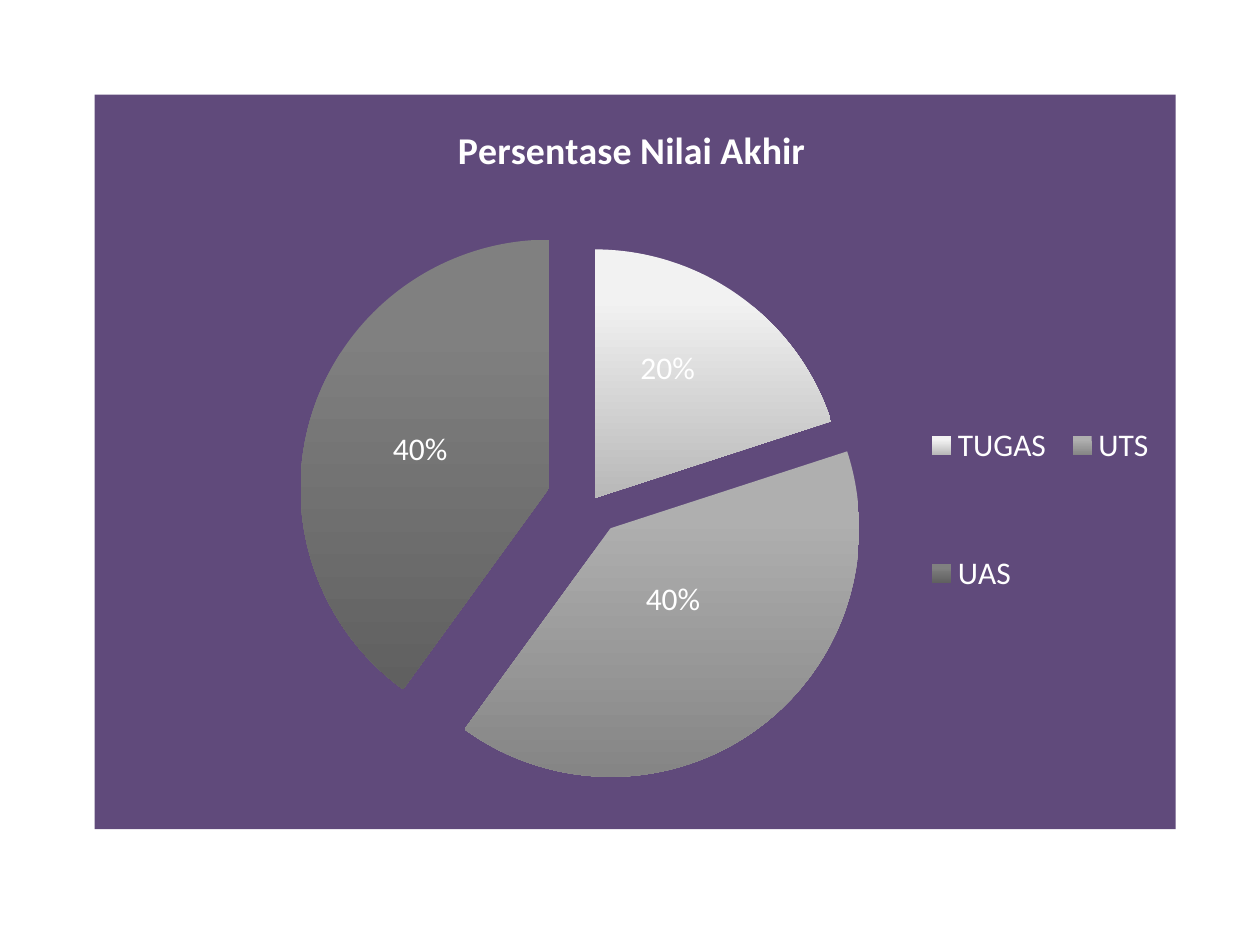
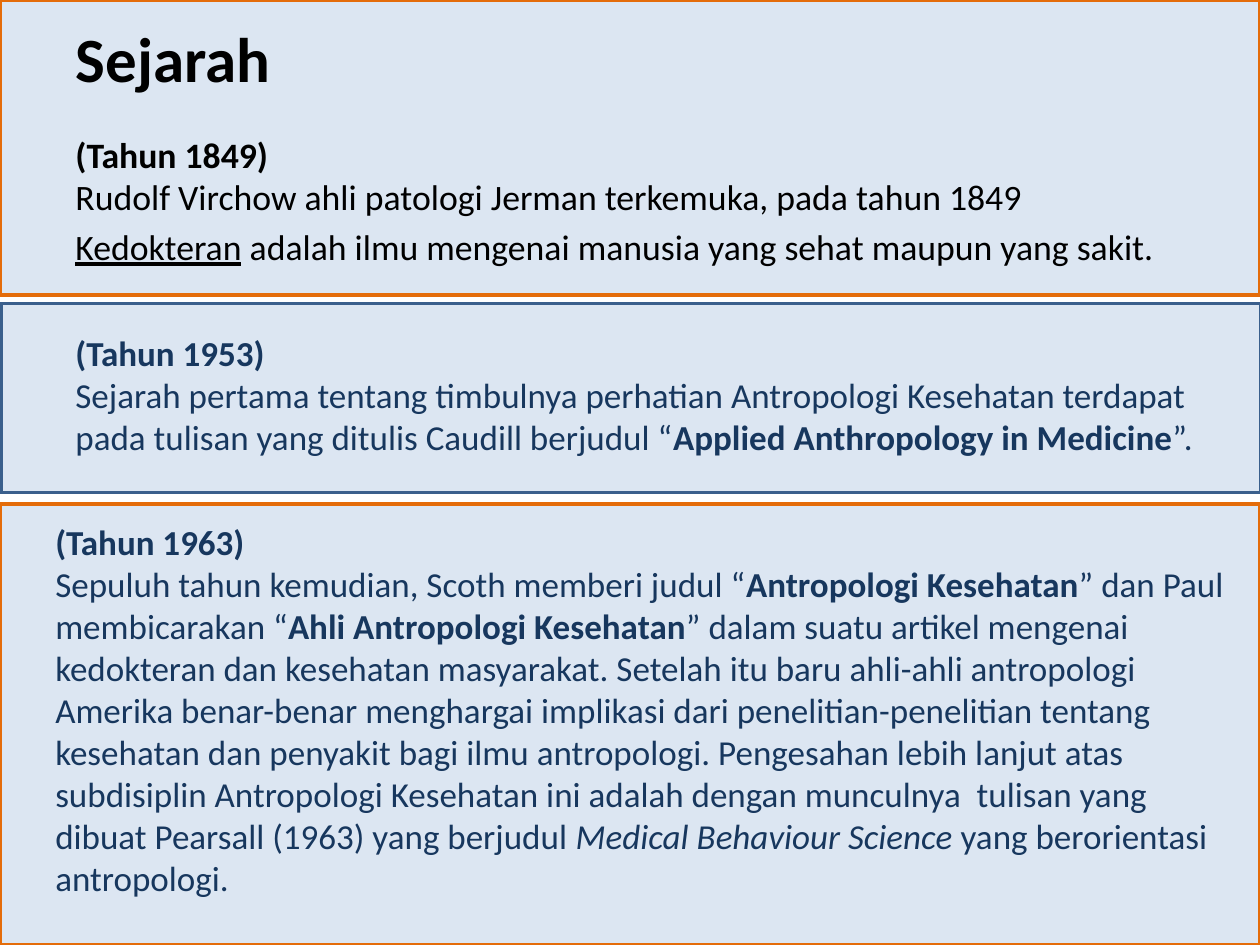
from typing import NamedTuple

from lxml import etree
from pptx import Presentation
from pptx.chart.data import CategoryChartData
from pptx.dml.color import RGBColor
from pptx.enum.chart import XL_CHART_TYPE, XL_LABEL_POSITION, XL_LEGEND_POSITION
from pptx.enum.shapes import MSO_SHAPE
from pptx.enum.text import MSO_ANCHOR, PP_ALIGN
from pptx.oxml import parse_xml
from pptx.oxml.ns import nsdecls, qn
from pptx.util import Inches, Pt

PIE = XL_CHART_TYPE.PIE
LABEL_CENTER = XL_LABEL_POSITION.CENTER
LEGEND_RIGHT = XL_LEGEND_POSITION.RIGHT
RECTANGLE = MSO_SHAPE.RECTANGLE
MIDDLE, TOP = MSO_ANCHOR.MIDDLE, MSO_ANCHOR.TOP
LEFT = PP_ALIGN.LEFT

FONT = "Calibri"
WHITE = RGBColor(0xFF, 0xFF, 0xFF)
BLACK = RGBColor(0x00, 0x00, 0x00)
PURPLE = RGBColor(0x60, 0x4A, 0x7B)
PALE_BLUE = RGBColor(0xDC, 0xE6, 0xF2)
ORANGE = RGBColor(0xE4, 0x6C, 0x0A)
STEEL_BLUE = RGBColor(0x3A, 0x5F, 0x8C)
NAVY = RGBColor(0x17, 0x37, 0x5E)

TITLE_ONLY, BLANK = 5, 6


class Slice(NamedTuple):
    name: str
    value: int
    top_color: RGBColor
    bottom_color: RGBColor
    explosion: int
    label_shift: tuple[float, float]


class Span(NamedTuple):
    text: str
    bold: bool = False
    italic: bool = False
    underline: bool = False


class Panel(NamedTuple):
    left: float
    top: float
    height: float
    line: RGBColor


class Passage(NamedTuple):
    left: float
    top: float
    width: float
    height: float
    size: float
    color: RGBColor
    paragraphs: list[list[Span]]


SLICES = [
    Slice("TUGAS", 20, RGBColor(0xF2, 0xF2, 0xF2), RGBColor(0xB8, 0xB8, 0xB8), 2, (0, -0.04)),
    Slice("UTS", 40, RGBColor(0xAF, 0xAF, 0xAF), RGBColor(0x85, 0x85, 0x85), 13, (-0.01, -0.04)),
    Slice("UAS", 40, RGBColor(0x80, 0x80, 0x80), RGBColor(0x60, 0x60, 0x60), 18, (-0.01, 0)),
]

PANELS = [
    Panel(0, 0, 2.34, ORANGE),
    Panel(0.01, 2.41, 1.5, STEEL_BLUE),
    Panel(0, 4, 3.5, ORANGE),
]

PASSAGES = [
    Passage(0.5, 1.01, 9.25, 1.33, 20.4, BLACK, [
        [
            Span("(Tahun 1849)\n", bold=True),
            Span("Rudolf Virchow ahli patologi Jerman terkemuka, pada tahun 1849"),
        ],
        [
            Span("Kedokteran", underline=True),
            Span(" adalah ilmu mengenai manusia yang sehat maupun yang sakit."),
        ],
    ]),
    Passage(0.5, 2.58, 9.25, 1.33, 20, NAVY, [[
        Span("(Tahun 1953)\n", bold=True),
        Span("Sejarah pertama tentang timbulnya perhatian Antropologi Kesehatan "
             "terdapat pada tulisan yang ditulis Caudill berjudul “"),
        Span("Applied Anthropology in Medicine", bold=True),
        Span("”."),
    ]]),
    Passage(0.34, 4.08, 9.58, 3.25, 20, NAVY, [[
        Span("(Tahun 1963)\n", bold=True),
        Span("Sepuluh tahun kemudian, Scoth memberi judul “"),
        Span("Antropologi Kesehatan", bold=True),
        Span("” dan Paul membicarakan “"),
        Span("Ahli Antropologi Kesehatan", bold=True),
        Span("” dalam suatu artikel mengenai kedokteran dan kesehatan masyarakat. "
             "Setelah itu baru ahli-ahli antropologi Amerika benar-benar menghargai "
             "implikasi dari penelitian-penelitian tentang kesehatan dan penyakit bagi "
             "ilmu antropologi. Pengesahan lebih lanjut atas subdisiplin Antropologi "
             "Kesehatan ini adalah dengan munculnya  tulisan yang dibuat Pearsall (1963) "
             "yang berjudul "),
        Span("Medical Behaviour Science", italic=True),
        Span(" yang berorientasi antropologi."),
    ]]),
]


def style_font(font, size: float, color: RGBColor, bold: bool = False) -> None:
    font.name = FONT
    font.size = Pt(size)
    font.bold = bold
    font.color.rgb = color


def add_span(paragraph, span: Span, size: float, color: RGBColor) -> None:
    """Add one run; a newline at its end becomes a line break."""
    run = paragraph.add_run()
    run.text = span.text.rstrip("\n")
    style_font(run.font, size, color, span.bold)
    run.font.italic = span.italic
    run.font.underline = span.underline
    if span.text.endswith("\n"):
        paragraph.add_line_break()


def place(element, after: str | None, **fractions: float) -> None:
    """Give a chart part a manual layout, in fractions of the chart."""
    old = element.find(qn("c:layout"))
    if old is not None:
        element.remove(old)
    layout = parse_xml(f"<c:layout {nsdecls('c')}><c:manualLayout/></c:layout>")
    if "w" in fractions:
        modes = {"xMode": "edge", "yMode": "edge"}
        if after is None:
            modes = {"layoutTarget": "inner", **modes}
    else:
        modes = {}
    for tag, value in {**modes, **fractions}.items():
        etree.SubElement(layout[0], qn(f"c:{tag}")).set("val", str(value))
    if after is None:
        element.insert(0, layout)
    else:
        element.find(qn(after)).addnext(layout)


def format_slices(chart) -> None:
    series = chart.plots[0].series[0]
    for index, part in enumerate(SLICES):
        point = series.points[index]
        fill = point.format.fill
        fill.gradient()
        fill.gradient_angle = 270
        first, last = fill.gradient_stops
        first.color.rgb, last.color.rgb = part.top_color, part.bottom_color
        first.position, last.position = 0.2, 1
        point.format.line.fill.background()
        style_font(point.data_label.font, 18, WHITE)
        point.data_label.position = LABEL_CENTER

    # Exploded slices and shifted labels
    points = chart.element.xpath(".//c:dPt")
    labels = chart.element.xpath(".//c:dLbl")
    for part, point, label in zip(SLICES, points, labels):
        explosion = parse_xml(f'<c:explosion {nsdecls("c")} val="{part.explosion}"/>')
        point.find(qn("c:spPr")).addprevious(explosion)
        shift_x, shift_y = part.label_shift
        place(label, "c:idx", x=shift_x, y=shift_y)


def build_grade_slide(deck) -> None:
    slide = deck.slides.add_slide(deck.slide_layouts[BLANK])
    data = CategoryChartData(number_format='0"%"')
    data.categories = [part.name for part in SLICES]
    data.add_series("Persentase Nilai Akhir", [part.value for part in SLICES])
    chart = slide.shapes.add_chart(
        PIE, Inches(0.75), Inches(0.75), Inches(8.58), Inches(5.83), data
    ).chart
    style_font(chart.font, 18, WHITE)
    chart.plots[0].vary_by_categories = True

    # Title
    chart.has_title = True
    run = chart.chart_title.text_frame.paragraphs[0].add_run()
    run.text = "Persentase Nilai Akhir"
    style_font(run.font, 21.6, WHITE, bold=True)
    place(chart.element.xpath(".//c:title")[0], "c:tx",
          xMode="edge", yMode="edge", x=0.33, y=0.03)

    # Legend and plot
    chart.has_legend = True
    chart.legend.position = LEGEND_RIGHT
    chart.legend.include_in_layout = False
    style_font(chart.legend.font, 18, WHITE)
    place(chart.element.xpath(".//c:legend")[0], "c:legendPos",
          x=0.76, y=0.33, w=0.23, h=0.47)
    place(chart.element.xpath(".//c:plotArea")[0], None,
          x=0.23, y=0.21, w=0.46, h=0.69)
    format_slices(chart)

    # Purple background
    background = parse_xml(
        f'<c:spPr {nsdecls("c", "a")}><a:solidFill><a:srgbClr val="{PURPLE}"/>'
        "</a:solidFill><a:ln><a:noFill/></a:ln></c:spPr>"
    )
    chart.element.find(qn("c:chart")).addnext(background)


def add_panel(slide, panel: Panel) -> None:
    box = slide.shapes.add_shape(
        RECTANGLE, Inches(panel.left), Inches(panel.top), Inches(10), Inches(panel.height)
    )
    box.shadow.inherit = False
    box.fill.solid()
    box.fill.fore_color.rgb = PALE_BLUE
    box.line.color.rgb = panel.line
    box.line.width = Pt(2)


def add_passage(slide, passage: Passage) -> None:
    box = slide.shapes.add_textbox(
        Inches(passage.left), Inches(passage.top),
        Inches(passage.width), Inches(passage.height),
    )
    frame = box.text_frame
    frame.word_wrap = True
    frame.vertical_anchor = TOP
    for index, spans in enumerate(passage.paragraphs):
        paragraph = frame.add_paragraph() if index else frame.paragraphs[0]
        paragraph.line_spacing = Pt(24)
        paragraph.space_before = Pt(4.5 if index else 0)
        for span in spans:
            add_span(paragraph, span, passage.size, passage.color)


def build_history_slide(deck) -> None:
    slide = deck.slides.add_slide(deck.slide_layouts[TITLE_ONLY])
    for panel in PANELS:
        add_panel(slide, panel)

    # Title, brought in front of the panels
    title = slide.shapes.title
    title.left, title.top = Inches(0.5), Inches(-0.17)
    title.width, title.height = Inches(4.5), Inches(1.25)
    title.text_frame.vertical_anchor = MIDDLE
    paragraph = title.text_frame.paragraphs[0]
    paragraph.alignment = LEFT
    add_span(paragraph, Span("Sejarah", bold=True), 36, BLACK)
    slide.shapes.element.append(title.element)

    for passage in PASSAGES:
        add_passage(slide, passage)


def main() -> None:
    deck = Presentation()
    deck.slide_width, deck.slide_height = Inches(10), Inches(7.5)
    build_grade_slide(deck)
    build_history_slide(deck)
    deck.save("out.pptx")


if __name__ == "__main__":
    main()
